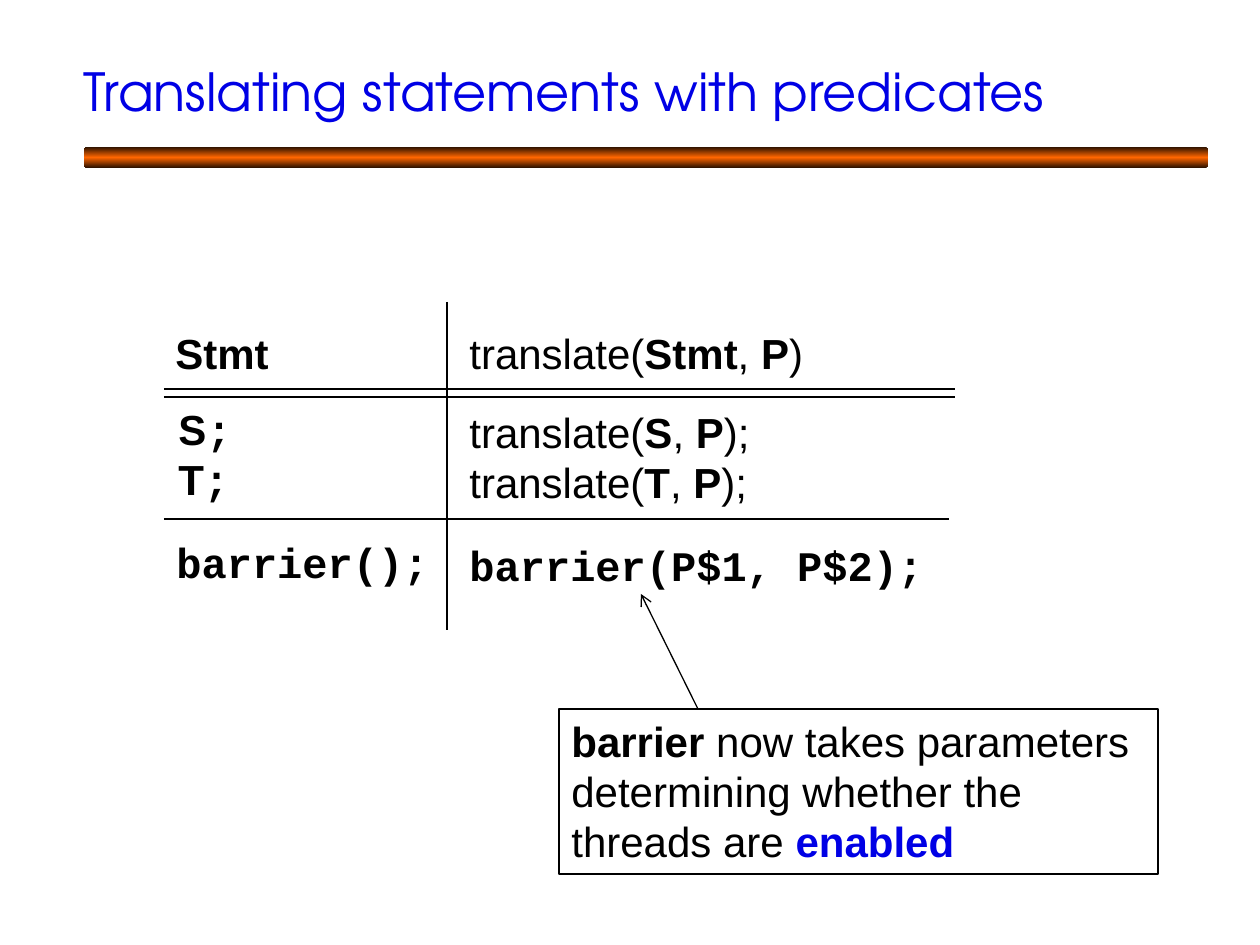
from copy import deepcopy
from typing import NamedTuple

from lxml.etree import SubElement as Sub
from pptx import Presentation
from pptx.dml.color import RGBColor
from pptx.enum.shapes import MSO_CONNECTOR as Link, MSO_SHAPE as Form
from pptx.enum.text import MSO_ANCHOR as Anchor
from pptx.oxml.ns import qn
from pptx.util import Pt

INK, BLUE = "000000", "0000E5"
SANS, MONO = "Arial", "Courier New"


class Run(NamedTuple):
    text: str
    bold: bool = False
    font: str = SANS
    ink: str = INK


class Cell(NamedTuple):
    box: tuple
    rows: list


class Rule(NamedTuple):
    start: tuple
    end: tuple
    arrow: bool = False


def px(n: int) -> int:
    return round(n * 914400 / 126)


def tint(code: str) -> RGBColor:
    return RGBColor.from_string(code)


def write(shape, rows: list, size: int = 24, anchor=Anchor.TOP) -> None:
    frame = shape.text_frame
    frame.word_wrap = True
    frame.vertical_anchor = anchor
    for i, row in enumerate(rows):
        para = frame.add_paragraph() if i else frame.paragraphs[0]
        for item in row:
            run = para.add_run()
            run.text = item.text
            font = run.font
            font.size, font.bold, font.name = Pt(size), item.bold, item.font
            font.color.rgb = tint(item.ink)


def put(slide, cell: Cell, **style):
    shape = slide.shapes.add_textbox(*map(px, cell.box))
    write(shape, cell.rows, **style)
    return shape


def draw(slide, rule: Rule) -> None:
    line = slide.shapes.add_connector(
        Link.STRAIGHT, *map(px, rule.start + rule.end))
    line.line.color.rgb = tint(INK)
    line.line.width = Pt(0.75)
    props = line.line._get_or_add_ln()
    if rule.arrow:
        Sub(props, qn("a:tailEnd"), type="arrow")
    Sub(props.getparent(), qn("a:effectLst"))


def band(slide, box: tuple, edge: str, core: str) -> None:
    bar = slide.shapes.add_shape(Form.ROUNDED_RECTANGLE, *map(px, box))
    bar.adjustments[0] = 0.17
    bar.shadow.inherit = False
    bar.line.fill.background()
    fill = bar.fill
    fill.gradient()
    fill.gradient_angle = 270
    first = fill.gradient_stops[0]._gs
    first.addnext(deepcopy(first))
    for stop, pos, code in zip(fill.gradient_stops, (0, 0.5, 1), (edge, core, edge)):
        stop.position = pos
        stop.color.rgb = tint(code)


def call(name: str, end: str) -> list:
    return [Run("translate("), Run(name, True), Run(", "), Run("P", True), Run(end)]


def code(text: str) -> Run:
    return Run(text, True, MONO)


LEFT, SPLIT, RIGHT = 164, 447, 955
CELLS = [
    Cell((163, 321, 277, 63), [[Run("Stmt", True)]]),
    Cell((457, 321, 519, 63), [call("Stmt", ")")]),
    Cell((166, 397, 87, 115), [[Run(s, True), code(";")] for s in "ST"]),
    Cell((457, 400, 483, 115), [call(s, ");") for s in "ST"]),
    Cell((164, 530, 281, 63), [[code("barrier();")]]),
    Cell((457, 533, 483, 63), [[code("barrier(P$1, P$2);")]]),
]
RULES = [
    Rule((SPLIT, 302), (SPLIT, 630)),
    Rule((LEFT, 389), (RIGHT, 389)),
    Rule((LEFT, 397), (RIGHT, 397)),
    Rule((LEFT, 519), (949, 519)),
    Rule((698, 709), (641, 594), arrow=True),
]
NOTE = Cell((559, 709, 599, 165), [[
    Run("barrier", True),
    Run(" now takes parameters determining whether the threads are "),
    Run("enabled", True, ink=BLUE),
]])
TITLE = Cell((71, 28, 1144, 126), [[
    Run("Translating statements with predicates",
        font="TeX Gyre Adventor", ink=BLUE),
]])


def main() -> None:
    deck = Presentation()
    deck.slide_width, deck.slide_height = px(1260), px(945)
    slide = deck.slides.add_slide(deck.slide_layouts[6])
    band(slide, (84, 147, 1124, 21), "2A1100", "FF6600")
    put(slide, TITLE, size=30, anchor=Anchor.MIDDLE)
    for cell in CELLS:
        put(slide, cell)
    note = put(slide, NOTE)
    note.line.color.rgb = tint(INK)
    note.line.width = Pt(0.75)
    for rule in RULES:
        draw(slide, rule)
    deck.save("out.pptx")


if __name__ == "__main__":
    main()
